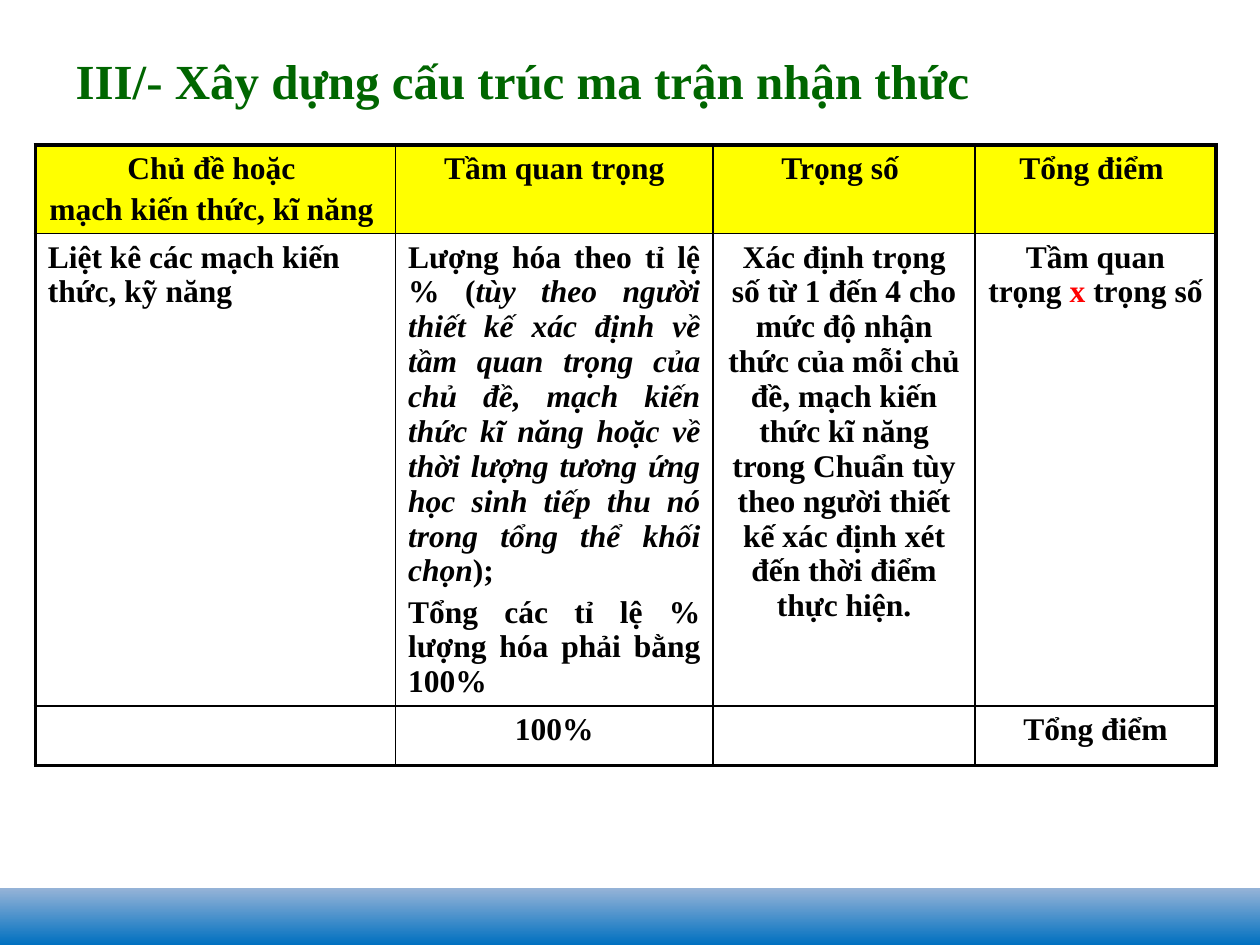
from lxml import etree
from pptx import Presentation, util as u
from pptx.dml.color import RGBColor
from pptx.enum import shapes, text
from pptx.oxml.ns import qn

BLACK = RGBColor(0x00, 0x00, 0x00)
WHITE = RGBColor(0xFF, 0xFF, 0xFF)
GREEN = RGBColor(0x00, 0x66, 0x00)
RED = RGBColor(0xFF, 0x00, 0x00)
YELLOW = RGBColor(0xFF, 0xFF, 0x00)
DEEP_BLUE = RGBColor(0x00, 0x70, 0xC0)
PALE_BLUE = RGBColor(0x95, 0xB3, 0xD7)

CENTER = text.PP_ALIGN.CENTER
LEFT = text.PP_ALIGN.LEFT
JUSTIFY = text.PP_ALIGN.JUSTIFY
ITALIC = {"italic": True}
THIN, THICK = 1, 2.25

COLUMNS = [2.86, 2.52, 2.08, 1.91]
ROWS = [0.7, 3.75, 0.47]
MATRIX = [
    [
        (CENTER, [["Chủ đề hoặc "], ["mạch kiến thức, kĩ năng "]]),
        (CENTER, [["Tầm quan trọng"]]),
        (CENTER, [["Trọng số "]]),
        (CENTER, [["Tổng điểm "]]),
    ],
    [
        (LEFT, [["Liệt kê các mạch kiến thức, kỹ năng"]]),
        (JUSTIFY, [
            ["Lượng hóa theo tỉ lệ % (",
             ("tùy theo người thiết kế xác định về tầm quan trọng của chủ đề, "
              "mạch kiến thức kĩ năng hoặc về thời lượng tương ứng học sinh "
              "tiếp thu nó trong tổng thể khối chọn", ITALIC),
             ");  "],
            ["Tổng các tỉ lệ % lượng hóa phải bằng 100%"],
        ]),
        (CENTER, [["Xác định trọng số từ 1 đến 4 cho mức độ nhận thức của mỗi "
                   "chủ đề, mạch kiến thức kĩ năng trong Chuẩn tùy theo người "
                   "thiết kế xác định xét đến thời điểm thực hiện."]]),
        (CENTER, [["Tầm quan trọng ", ("x ", {"color": RED}), "trọng số"]]),
    ],
    [(LEFT, []), (CENTER, [["100%"]]), (LEFT, []), (CENTER, [["Tổng điểm"]])],
]


class Deck:
    """Hold the text style and the current slide, placing parts by shares of the slide."""

    style = {"name": "Times New Roman", "size": u.Pt(18), "bold": True, "color": BLACK}

    def __init__(self, width, height):
        self.show = Presentation()
        self.show.slide_width, self.show.slide_height = u.Inches(width), u.Inches(height)
        self.slide = self.show.slides.add_slide(self.show.slide_layouts[5])

    def box(self, left, top, width, height):
        across, down = self.show.slide_width, self.show.slide_height
        return [int(n) for n in (left * across, top * down, width * across, height * down)]

    def add_words(self, paragraph, wording, **changes):
        run = paragraph.add_run()
        run.text = wording
        for key, value in {**self.style, **changes}.items():
            if key == "color":
                run.font.color.rgb = value
            else:
                setattr(run.font, key, value)

    def title(self, wording, share, **changes):
        heading = self.slide.shapes.title
        places = dict(zip(("left", "top", "width", "height"), self.box(*share)))
        for key, value in places.items():
            setattr(heading, key, value)
        heading.text_frame.vertical_anchor = text.MSO_ANCHOR.MIDDLE
        line = heading.text_frame.paragraphs[0]
        line.alignment = LEFT
        self.add_words(line, wording, **changes)

    def band(self, share, start, end):
        footer = self.slide.shapes.add_shape(shapes.MSO_SHAPE.RECTANGLE, *self.box(*share))
        footer.shadow.inherit = False
        footer.line.fill.background()
        footer.fill.gradient()
        footer.fill.gradient_angle = 90
        for stop, color in zip(footer.fill.gradient_stops, (start, end)):
            stop.color.rgb = color

    def border(self, cell, widths):
        properties = cell._tc.get_or_add_tcPr()
        for place, (side, points) in enumerate(widths.items()):
            edge = etree.Element(qn(f"a:ln{side}"), w=str(int(u.Pt(points))))
            solid = etree.SubElement(edge, qn("a:solidFill"))
            etree.SubElement(solid, qn("a:srgbClr"), val=str(BLACK))
            properties.insert(place, edge)

    def fill_cell(self, cell, alignment, paragraphs):
        for number, parts in enumerate(paragraphs):
            frame = cell.text_frame
            line = frame.add_paragraph() if number else frame.paragraphs[0]
            line.alignment = alignment
            line.space_before = u.Pt(3.6)
            for part in parts:
                wording, changes = (part, {}) if isinstance(part, str) else part
                self.add_words(line, wording, **changes)

    def table(self, share, columns, rows, content):
        grid = self.slide.shapes.add_table(len(rows), len(columns), *self.box(*share)).table
        grid.first_row = grid.horz_banding = False
        for column, width in zip(grid.columns, columns):
            column.width = u.Inches(width)
        for row, height in zip(grid.rows, rows):
            row.height = u.Inches(height)
        last_row, last_column = len(rows) - 1, len(columns) - 1
        for r, entries in enumerate(content):
            for c, (alignment, paragraphs) in enumerate(entries):
                cell = grid.cell(r, c)
                cell.fill.solid()
                cell.fill.fore_color.rgb = WHITE if r else YELLOW
                outer = {"L": c == 0, "R": c == last_column, "T": r == 0, "B": r == last_row}
                self.border(cell, {side: THICK if edge else THIN for side, edge in outer.items()})
                self.fill_cell(cell, alignment, paragraphs)


def main():
    deck = Deck(10, 7.5)
    deck.band((0, 0.94, 1, 0.06), DEEP_BLUE, PALE_BLUE)
    deck.title("III/- Xây dựng cấu trúc ma trận nhận thức", (0.05, 0.04, 0.92, 0.09),
               size=u.Pt(28), color=GREEN)
    deck.table((0.028, 1.15 / 7.5, 0.937, sum(ROWS) / 7.5), COLUMNS, ROWS, MATRIX)
    deck.show.save("out.pptx")


if __name__ == "__main__":
    main()
